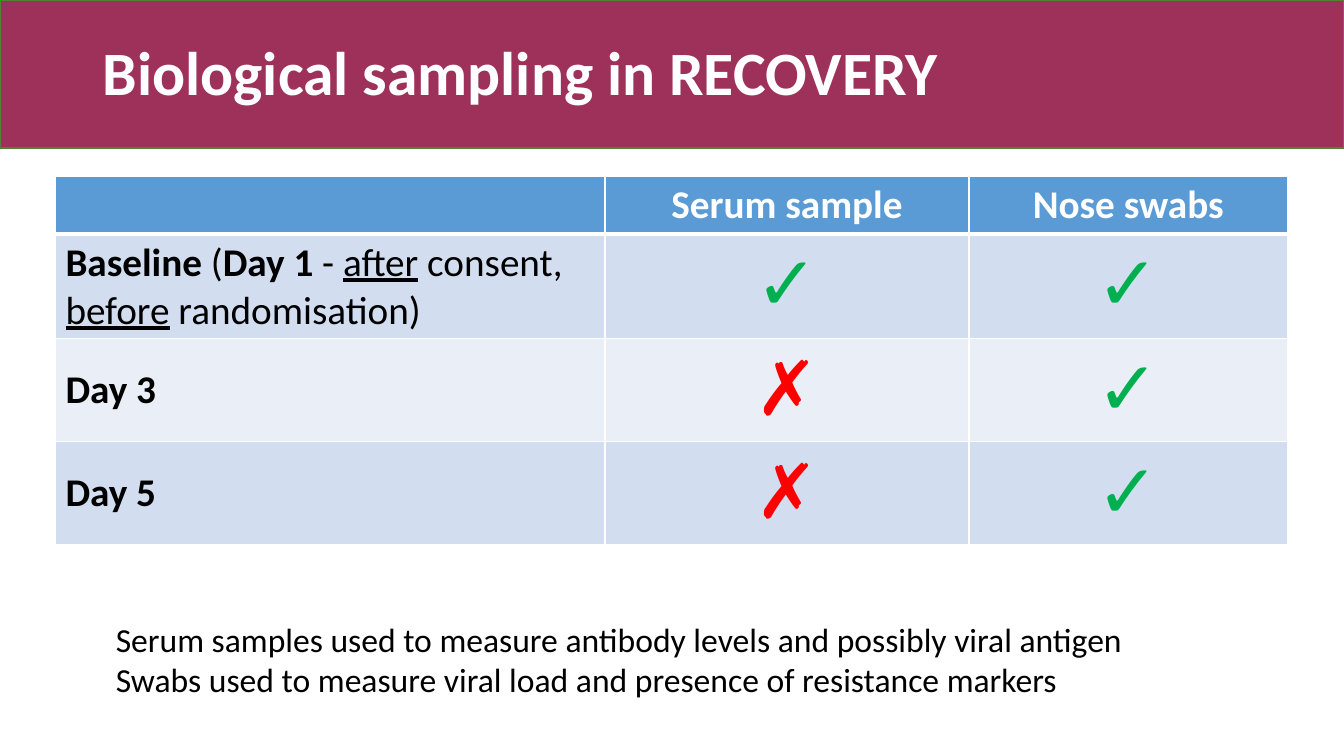
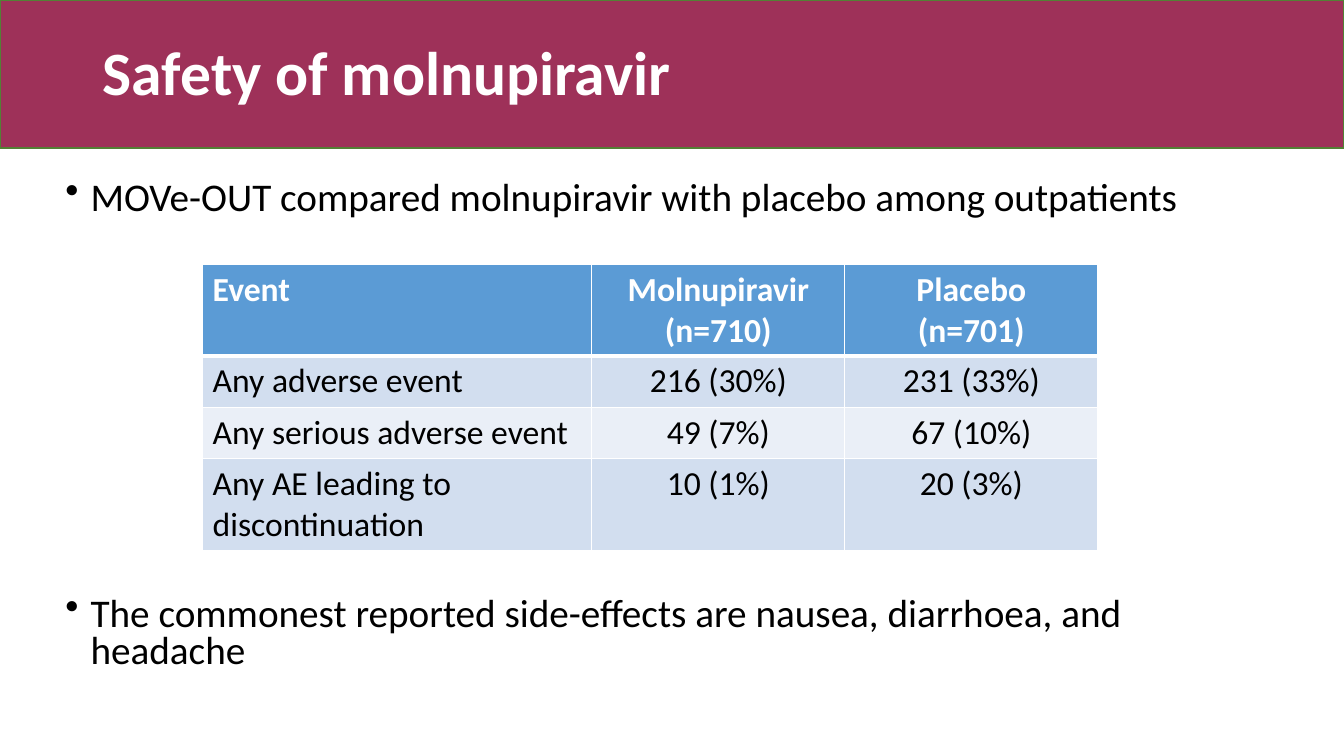
"""Build two trial slides: biological sampling and the safety of molnupiravir."""
import pptx
import pptx.dml.color
import pptx.enum.shapes
import pptx.enum.text
import pptx.oxml
import pptx.oxml.ns
import pptx.util
from dataclasses import dataclass

Inches = pptx.util.Inches
Pt = pptx.util.Pt
RGB = pptx.dml.color.RGBColor.from_string
Align = pptx.enum.text.PP_ALIGN
Anchor = pptx.enum.text.MSO_ANCHOR


@dataclass(frozen=True)
class Theme:
    """Colours, font and type sizes of the deck."""
    font: str = "Calibri"
    band: str = "9E3159"
    band_line: str = "538035"
    header: str = "5B9BD5"
    stripes: tuple = ("D2DEEF", "EAEFF7")
    light: str = "FFFFFF"
    dark: str = "000000"
    yes: str = "00B050"
    no: str = "FF0000"
    title: int = 44
    body: int = 28
    small: int = 24
    mark: int = 54


THEME = Theme()
SLIDE_WIDTH, SLIDE_HEIGHT = 13.33, 7.5
BAND_HEIGHT = 1.47
CONTENT_LEFT, CONTENT_TOP, CONTENT_WIDTH = 0.55, 1.75, 12.22

BOLD, UNDERLINE = {"bold": True}, {"underline": True}
YES = [("✓", {"size": THEME.mark, "color": THEME.yes})]
NO = [("✗", {"size": THEME.mark, "color": THEME.no})]

SAMPLING = {
    "title": "Biological sampling in RECOVERY",
    "table": {
        "left": CONTENT_LEFT, "top": CONTENT_TOP, "size": THEME.body,
        "label_anchor": Anchor.MIDDLE,
        "columns": (5.45, 3.61, 3.16), "heights": (0.57, 1.04, 1.02, 1.02),
        "rows": [
            ["", "Serum sample", "Nose swabs"],
            [[("Baseline", BOLD), (" (", {}), ("Day 1 ", BOLD), ("- ", {}),
              ("after", UNDERLINE), (" consent, ", {}),
              ("before", UNDERLINE), (" randomisation)", {})], YES, YES],
            [[("Day 3", BOLD)], NO, YES],
            [[("Day 5", BOLD)], NO, YES],
        ],
    },
    "text": {
        "top": 6.09, "height": 0.91, "size": THEME.small,
        "indent": 0.5, "bullet": None, "spacing": 1.0, "gap": 0,
        "lines": ["Serum samples used to measure antibody levels and possibly viral antigen",
                  "Swabs used to measure viral load and presence of resistance markers"],
    },
}
SAFETY = {
    "title": "Safety of molnupiravir",
    "table": {
        "left": 2.01, "top": 2.62, "size": THEME.small,
        "label_anchor": Anchor.TOP,
        "columns": (3.86, 2.51, 2.51), "heights": (0.91, 0.51, 0.51, 0.91),
        "rows": [
            ["Event", "Molnupiravir\n(n=710)", "Placebo\n(n=701)"],
            ["Any adverse event", "216 (30%)", "231 (33%)"],
            ["Any serious adverse event", "49 (7%)", "67 (10%)"],
            ["Any AE leading to discontinuation", "10 (1%)", "20 (3%)"],
        ],
    },
    "text": {
        "top": CONTENT_TOP, "height": 5.01, "size": THEME.body,
        "indent": 0.25, "bullet": "•", "spacing": 0.8, "gap": 270,
        "lines": ["MOVe-OUT compared molnupiravir with placebo among outpatients",
                  "The commonest reported side-effects are nausea, diarrhoea, and headache"],
    },
}


def place(shape, left, top, width, height):
    """Set the position and size of a shape in inches."""
    for name, value in zip(("left", "top", "width", "height"), (left, top, width, height)):
        setattr(shape, name, Inches(value))


def add_span(para, text, size, color, **formats):
    """Add one formatted run to a paragraph."""
    span = para.add_run()
    span.text = text
    span.font.color.rgb = RGB(color)
    values = {"name": THEME.font, "size": Pt(size), "bold": False, **formats}
    for name, value in values.items():
        setattr(span.font, name, value)


def set_indent(para, indent, bullet):
    """Indent a paragraph and give it a hanging bullet where one is wanted."""
    properties = para._p.get_or_add_pPr()
    properties.set("marL", str(Inches(indent)))
    properties.set("indent", str(Inches(-indent if bullet else 0)))
    if bullet:
        mark = pptx.oxml.parse_xml(
            f'<a:buChar {pptx.oxml.ns.nsdecls("a")} char="{bullet}"/>')
        properties.append(mark)


def set_borders(cell, top, bottom):
    """Draw white borders round a cell, with the given top and bottom widths."""
    properties = cell._tc.get_or_add_tcPr()
    widths = {"lnL": 1, "lnR": 1, "lnT": top, "lnB": bottom}
    for index, (side, width) in enumerate(widths.items()):
        line = pptx.oxml.parse_xml(
            f'<a:{side} {pptx.oxml.ns.nsdecls("a")} w="{Pt(width)}"><a:solidFill>'
            f'<a:srgbClr val="{THEME.light}"/></a:solidFill></a:{side}>')
        properties.insert(index, line)


def add_table(page, content):
    """Add a table with a header row and striped body rows."""
    rows, columns, heights = content["rows"], content["columns"], content["heights"]
    frame = page.shapes.add_table(
        len(rows), len(columns), Inches(content["left"]), Inches(content["top"]),
        Inches(sum(columns)), Inches(sum(heights)))
    table = frame.table
    for column, width in zip(table.columns, columns):
        column.width = Inches(width)
    for r, (row, height) in enumerate(zip(rows, heights)):
        table.rows[r].height = Inches(height)
        base = {"size": content["size"], "color": THEME.dark if r else THEME.light,
                "bold": r == 0}
        for c, value in enumerate(row):
            cell = table.cell(r, c)
            cell.fill.solid()
            cell.fill.fore_color.rgb = RGB(THEME.stripes[(r - 1) % 2] if r else THEME.header)
            set_borders(cell, 3 if r == 1 else 1, 1 if r else 3)
            if r and c == 0:
                cell.vertical_anchor = content["label_anchor"]
            if isinstance(value, str):
                paragraphs = [[(line, {})] for line in value.split("\n") if line]
            else:
                paragraphs = [value]
            for index, spans in enumerate(paragraphs):
                para = cell.text_frame.add_paragraph() if index else cell.text_frame.paragraphs[0]
                para.alignment = Align.CENTER if c else Align.LEFT
                for text, formats in spans:
                    add_span(para, text, **{**base, **formats})


def add_text(page, content):
    """Add the text box with the slide's statements."""
    box = page.shapes.add_textbox(
        Inches(CONTENT_LEFT), Inches(content["top"]),
        Inches(CONTENT_WIDTH), Inches(content["height"]))
    box.text_frame.word_wrap = True
    for index, line in enumerate(content["lines"]):
        para = box.text_frame.add_paragraph() if index else box.text_frame.paragraphs[0]
        set_indent(para, content["indent"], content["bullet"])
        para.line_spacing = content["spacing"]
        para.space_before = Pt(content["gap"] if index else 0)
        add_span(para, line, content["size"], THEME.dark)


def add_band(layout, page):
    """Draw the title band and move it to the back of the shared layout."""
    band = page.shapes.add_shape(
        pptx.enum.shapes.MSO_SHAPE.RECTANGLE, 0, 0, Inches(SLIDE_WIDTH), Inches(BAND_HEIGHT))
    band.shadow.inherit = False
    band.fill.solid()
    band.fill.fore_color.rgb = RGB(THEME.band)
    band.line.color.rgb = RGB(THEME.band_line)
    band.line.width = Pt(1)
    layout.shapes._spTree.insert(2, band._element)


def add_page(deck, layout, content):
    """Add a slide with its title, text and table."""
    page = deck.slides.add_slide(layout)
    title = page.shapes.title
    place(title, 0.92, 0.02, 11.5, 1.45)
    formats = {"word_wrap": True, "auto_size": pptx.enum.text.MSO_AUTO_SIZE.NONE,
               "vertical_anchor": Anchor.MIDDLE}
    for name, value in formats.items():
        setattr(title.text_frame, name, value)
    para = title.text_frame.paragraphs[0]
    para.alignment = Align.LEFT
    para.line_spacing = 0.9
    add_span(para, content["title"], THEME.title, THEME.light, bold=True)
    add_text(page, content["text"])
    add_table(page, content["table"])
    return page


def main():
    """Build and save the deck."""
    deck = pptx.Presentation()
    deck.slide_width, deck.slide_height = Inches(SLIDE_WIDTH), Inches(SLIDE_HEIGHT)
    layout = deck.slide_layouts.get_by_name("Title Only")
    pages = [add_page(deck, layout, content) for content in (SAMPLING, SAFETY)]
    add_band(layout, pages[0])
    deck.save("out.pptx")


if __name__ == "__main__":
    main()
